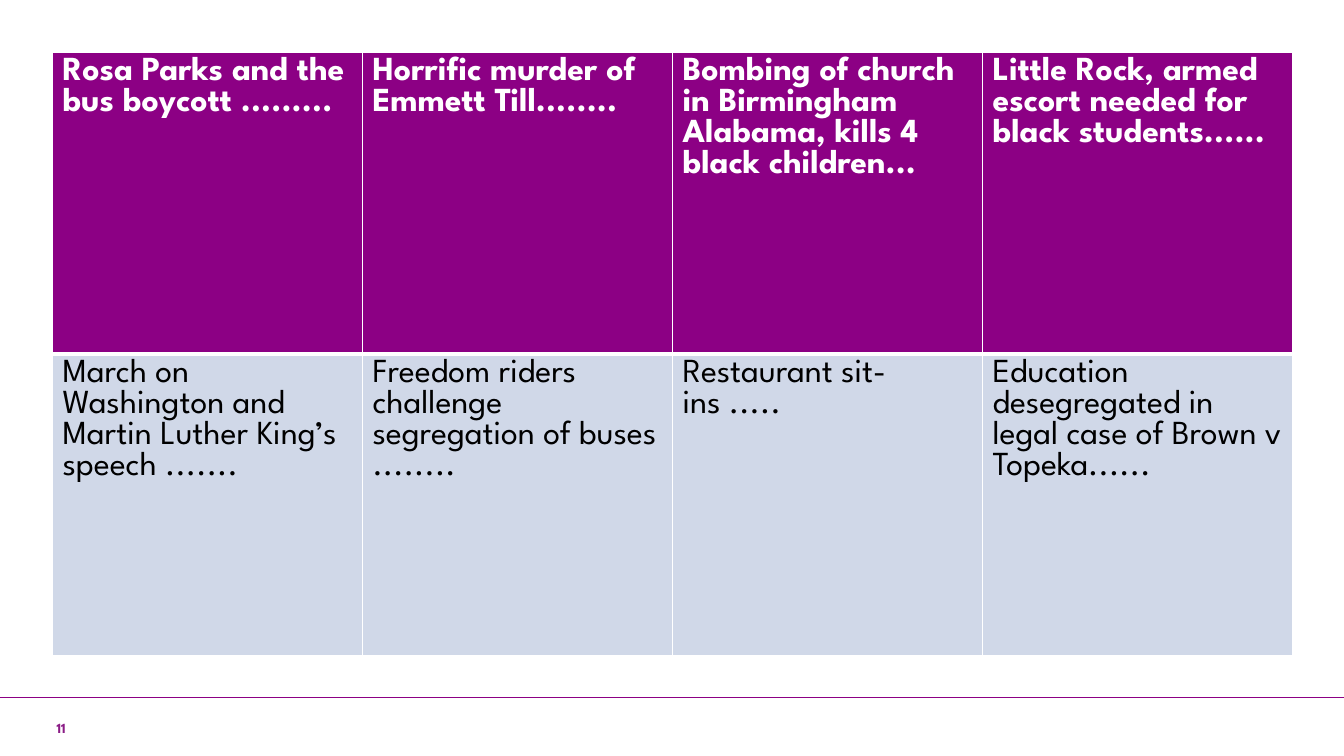
from lxml import etree
from pptx import Presentation
from pptx import util as u
from pptx.dml.color import RGBColor
from pptx.enum import shapes, text
from pptx.oxml.ns import qn

PURPLE, PALE, WHITE, BLACK = "8C0084", "D0D8E8", "FFFFFF", "000000"
HEADINGS = [
    "Rosa Parks and the bus boycott .........",
    "Horrific murder of Emmett Till........",
    "Bombing of church in Birmingham Alabama, kills 4 black children...",
    "Little Rock, armed escort needed for black students......",
]
EVENTS = [
    "March on Washington and Martin Luther King’s speech .......",
    "Freedom riders challenge segregation of buses\n........",
    "Restaurant sit-ins .....",
    "Education desegregated in legal case of Brown v Topeka......",
]


def color(value):
    """Turn a hex string into a colour."""
    return RGBColor.from_string(value)


class SlideBuilder:
    """Hold the text style and the current slide."""

    def __init__(self, page, face):
        self.page = page
        self.face = face

    def set_text(self, frame, words, size, ink, bold, align=text.PP_ALIGN.LEFT):
        """Fill a text frame, one paragraph a line."""
        frame.text = words
        for para in frame.paragraphs:
            para.alignment = align
            para.font.name = self.face
            para.font.size = u.Pt(size)
            para.font.bold = bold
            para.font.color.rgb = color(ink)

    def rule(self, top, width, ink, weight):
        """Draw a horizontal line from the left edge."""
        line = self.page.shapes.add_connector(
            shapes.MSO_CONNECTOR.STRAIGHT, 0, u.Inches(top), u.Inches(width), u.Inches(top))
        line.line.color.rgb = color(ink)
        line.line.width = u.Pt(weight)
        etree.SubElement(line._element.spPr, qn("a:effectLst"))

    def page_number(self, number, left, top, width, height):
        """Add the right-aligned page number."""
        box = self.page.shapes.add_textbox(*map(u.Inches, (left, top, width, height)))
        frame = box.text_frame
        frame.word_wrap = True
        frame.vertical_anchor = text.MSO_ANCHOR.MIDDLE
        self.set_text(frame, number, 10, "8B1C86", True, text.PP_ALIGN.RIGHT)

    def border(self, cell, side, weight):
        """Give one side of a cell a white border."""
        edge = etree.SubElement(
            cell._tc.get_or_add_tcPr(), qn(f"a:ln{side}"), w=str(u.Pt(weight)))
        fill = etree.SubElement(edge, qn("a:solidFill"))
        etree.SubElement(fill, qn("a:srgbClr"), val=WHITE)

    def grid(self, rows, left, top, width, height):
        """Add an even table whose first row is a heading."""
        table = self.page.shapes.add_table(
            len(rows), len(rows[0]), *map(u.Inches, (left, top, width, height))).table
        for index, row in enumerate(rows):
            heading = index == 0
            weights = {"L": 1, "R": 1, "T": 1 if heading else 3, "B": 3 if heading else 1}
            for column, words in enumerate(row):
                cell = table.cell(index, column)
                self.set_text(cell.text_frame, words, 24, WHITE if heading else BLACK, heading)
                for side, weight in weights.items():
                    self.border(cell, side, weight)
                cell.fill.solid()
                cell.fill.fore_color.rgb = color(PURPLE if heading else PALE)


def main():
    """Build the civil rights events slide."""
    deck = Presentation()
    deck.slide_width, deck.slide_height = u.Inches(13.33), u.Inches(7.5)
    builder = SlideBuilder(deck.slides.add_slide(deck.slide_layouts[6]), "League Spartan")
    builder.page_number("11", 0, 7.09, 0.75, 0.27)
    builder.rule(6.92, 13.33, PURPLE, 0.5)
    builder.grid([HEADINGS, EVENTS], 0.52, 0.52, 12.3, 5.98)
    deck.save("out.pptx")


if __name__ == "__main__":
    main()
